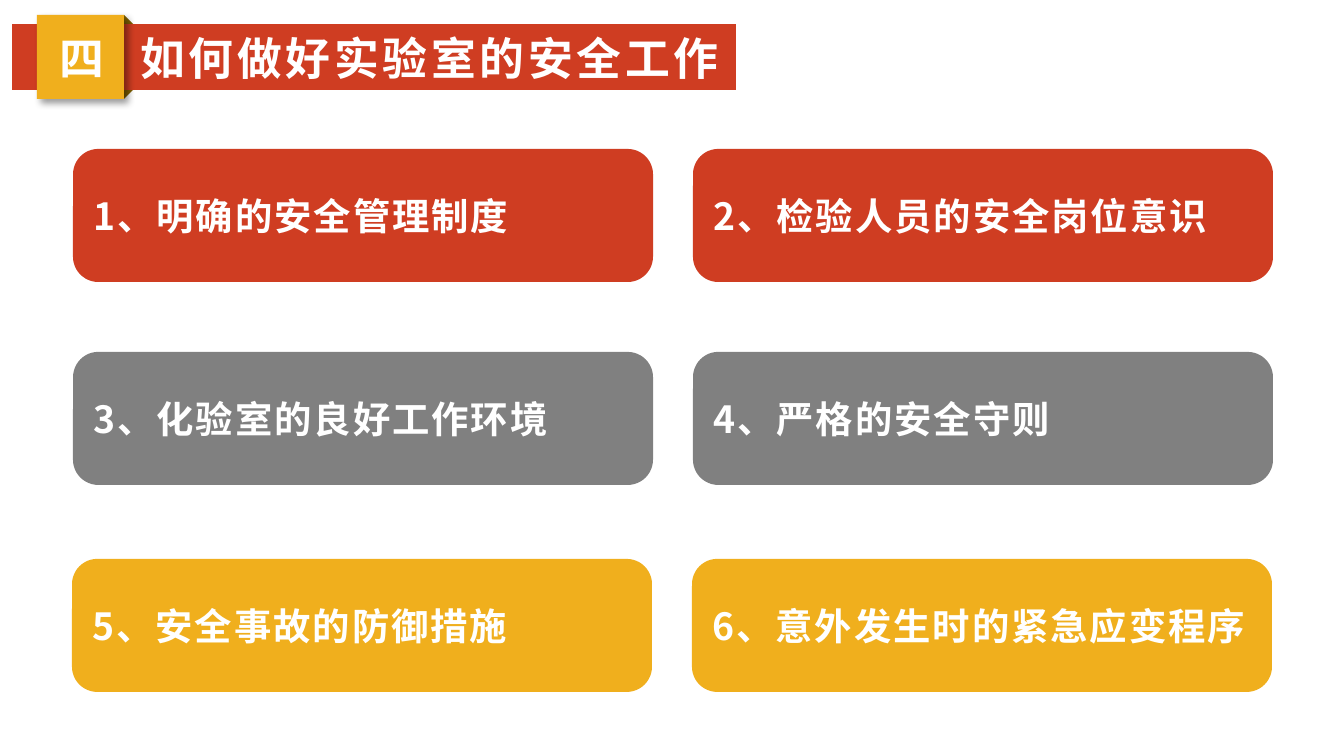
from lxml.etree import SubElement
from pptx import Presentation
from pptx.dml.color import RGBColor
from pptx.enum.shapes import MSO_SHAPE
from pptx.enum.text import MSO_ANCHOR, PP_ALIGN
from pptx.oxml.ns import qn
from pptx.util import Pt

FONT = "Noto Sans CJK SC"
RED, GREY, GOLD, FOLD, WHITE = "CF3D22", "808080", "F0AF1D", "806000", "FFFFFF"

NUMBER = "四"
TITLE = "如何做好实验室的安全工作"
# left edge of the row, top, fill, texts
ROWS = [
    (73, 149, RED, ["1、明确的安全管理制度", "2、检验人员的安全岗位意识"]),
    (73, 352, GREY, ["3、化验室的良好工作环境", "4、严格的安全守则"]),
    (72, 559, GOLD, ["5、安全事故的防御措施", "6、意外发生时的紧急应变程序"]),
]
CARD_W, CARD_H, CARD_STEP = 580, 133, 620


def px(n):
    return round(n * 914400 / 134.4)


def rgb(value):
    return RGBColor.from_string(value)


def add_box(s, kind, box, fill=None, corner=None):
    sp = s.shapes.add_shape(kind, *map(px, box))
    sp.shadow.inherit = False
    sp.line.fill.background()
    if fill:
        sp.fill.solid()
        sp.fill.fore_color.rgb = rgb(fill)
    else:
        sp.fill.background()
    if corner is not None:
        sp.adjustments[0] = corner
    return sp


def write(sp, text, size, align, spacing=0, wrap=True):
    tf = sp.text_frame
    tf.word_wrap = wrap
    tf.vertical_anchor = MSO_ANCHOR.MIDDLE
    p = tf.paragraphs[0]
    p.alignment = align
    r = p.add_run()
    r.text = text
    r.font.size = Pt(size)
    r.font.bold = True
    r.font.name = FONT
    r.font.color.rgb = rgb(WHITE)
    rpr = r.font._element
    SubElement(rpr, qn("a:ea"), typeface=FONT)
    if spacing:
        rpr.set("spc", str(spacing * 100))


def add_shadow(sp, color, alpha, blur, distance, angle):
    """Outer shadow: alpha in percent, blur and distance in points."""
    effects = sp._element.spPr.find(qn("a:effectLst"))
    shadow = SubElement(effects, qn("a:outerShdw"), blurRad=str(Pt(blur)),
                        dist=str(Pt(distance)), dir=str(angle * 60000),
                        algn="tl", rotWithShape="0")
    clr = SubElement(shadow, qn("a:srgbClr"), val=color)
    SubElement(clr, qn("a:alpha"), val=str(alpha * 1000))


def add_header(s):
    add_box(s, MSO_SHAPE.RIGHT_TRIANGLE, (124, 15, 18, 18), FOLD)
    lower_fold = add_box(s, MSO_SHAPE.RIGHT_TRIANGLE, (124, 81, 18, 18), FOLD)
    lower_fold.rotation = 90
    add_box(s, MSO_SHAPE.RECTANGLE, (12, 24, 724, 66), RED)
    badge = add_box(s, MSO_SHAPE.RECTANGLE, (37, 15, 87, 84), GOLD)
    add_shadow(badge, "000000", 40, 4, 3, 45)
    number = s.shapes.add_textbox(*map(px, (46, 24, 71, 67)))
    write(number, NUMBER, 24, PP_ALIGN.CENTER, wrap=False)
    title = add_box(s, MSO_SHAPE.ROUNDED_RECTANGLE, (123, 30, 613, 55), corner=0.09)
    write(title, TITLE, 24, PP_ALIGN.CENTER, spacing=2, wrap=False)


def add_cards(s):
    for left, top, fill, texts in ROWS:
        for col, text in enumerate(texts):
            box = (left + col * CARD_STEP, top, CARD_W, CARD_H)
            card = add_box(s, MSO_SHAPE.ROUNDED_RECTANGLE, box, fill, 0.19)
            write(card, text, 20, PP_ALIGN.LEFT, spacing=1)


def main():
    prs = Presentation()
    prs.slide_width, prs.slide_height = px(1344), px(756)
    s = prs.slides.add_slide(prs.slide_layouts[6])
    add_header(s)
    add_cards(s)
    prs.save("out.pptx")


if __name__ == "__main__":
    main()
